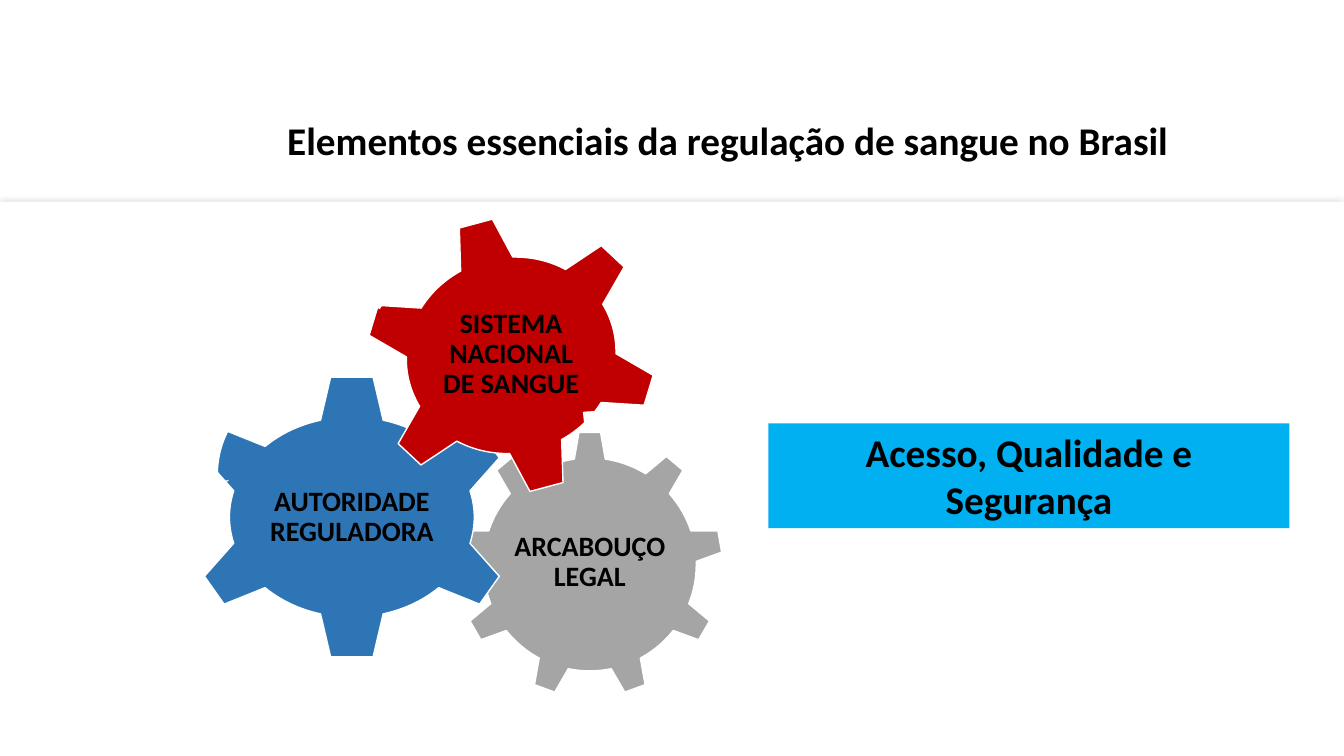
from dataclasses import dataclass

from lxml import etree
from pptx import Presentation
from pptx.dml.color import RGBColor
from pptx.enum.shapes import MSO_SHAPE as Geo
from pptx.enum.text import MSO_ANCHOR as Anchor, MSO_AUTO_SIZE as AutoSize, PP_ALIGN as Align
from pptx.oxml.ns import qn
from pptx.shapes.autoshape import Shape
from pptx.slide import Slide
from pptx.util import Inches, Pt

Box = tuple[float, float, float, float]


@dataclass(frozen=True)
class Theme:
    """Colours, font and type sizes."""
    font: str = "Calibri"
    heading: int = 28
    label: int = 20
    text: str = "000000"
    white: str = "FFFFFF"
    shadow: str = "A6A6A6"
    law: str = "A5A5A5"
    authority: str = "2E75B6"
    blood: str = "C00000"
    outcome: str = "00B0F0"


@dataclass(frozen=True)
class Gear:
    """A labelled gear."""
    geo: Geo
    box: Box
    color: str
    label: str
    label_box: Box
    rotation: float = 0


@dataclass(frozen=True)
class Arrow:
    """A circular arrow around a gear."""
    geo: Geo
    box: Box
    adjustments: tuple[float, ...]
    rotation: float = 0


THEME = Theme()

GEARS = [
    Gear(Geo.GEAR_9, (4.53, 4.28, 2.64, 2.64), THEME.law,
         "ARCABOUÇO LEGAL", (5.06, 4.9, 1.58, 1.36)),
    Gear(Geo.GEAR_6, (1.85, 3.71, 3.28, 2.84), THEME.authority,
         "AUTORIDADE REGULADORA", (2.63, 4.43, 1.72, 1.4)),
    Gear(Geo.GEAR_6, (3.61, 2.14, 2.92, 2.77), THEME.blood,
         "SISTEMA NACIONAL DE SANGUE", (4.26, 2.73, 1.62, 1.57), 345),
]

ARROWS = [
    Arrow(Geo.CIRCULAR_ARROW, (4.25, 3.96, 3.38, 3.38), (0.05, 2.99, 25.21, 158.52, 0.06)),
    Arrow(Geo.LEFT_CIRCULAR_ARROW, (1.88, 3.48, 2.46, 2.46), (0.07, 4.3, 104.89, 148.38, 0.08)),
    Arrow(Geo.CIRCULAR_ARROW, (3.44, 2.12, 2.16, 2.75), (0.06, 3.94, 133.14, 105.08, 0.07), 34.4),
]


def add_shape(s: Slide, geo: Geo, box: Box, color: str, rotation: float = 0) -> Shape:
    """Add a filled preset shape without line or shadow."""
    sp = s.shapes.add_shape(geo, *map(Inches, box))
    sp.shadow.inherit = False
    sp.fill.solid()
    sp.fill.fore_color.rgb = RGBColor.from_string(color)
    sp.line.fill.background()
    sp.rotation = rotation
    return sp


def set_text(sp: Shape, text: str, size: int) -> None:
    """Write one centred bold paragraph."""
    tf = sp.text_frame
    tf.text = text
    tf.word_wrap = True
    p = tf.paragraphs[0]
    p.alignment = Align.CENTER
    font = p.runs[0].font
    font.name, font.size, font.bold = THEME.font, Pt(size), True
    font.color.rgb = RGBColor.from_string(THEME.text)


def add_panel(s: Slide) -> None:
    """Add the white content panel with its soft shadow."""
    sp = add_shape(s, Geo.RECTANGLE, (0, 2, 13.34, 5.5), THEME.white)
    effects = sp._element.spPr.find(qn("a:effectLst"))
    shadow = etree.SubElement(effects, qn("a:outerShdw"), blurRad=str(Pt(5)),
                              dist="0", dir="0", algn="ctr", rotWithShape="0")
    color = etree.SubElement(shadow, qn("a:srgbClr"), val=THEME.shadow)
    etree.SubElement(color, qn("a:alpha"), val="42000")


def add_gear(s: Slide, gear: Gear) -> None:
    """Add a gear and its upright label."""
    sp = add_shape(s, gear.geo, gear.box, gear.color, gear.rotation)
    sp.line.color.rgb = RGBColor.from_string(THEME.white)
    sp.line.width = Pt(1)
    label = s.shapes.add_textbox(*map(Inches, gear.label_box))
    set_text(label, gear.label, THEME.label)
    tf = label.text_frame
    tf.vertical_anchor = Anchor.MIDDLE
    tf.margin_left = tf.margin_right = tf.margin_top = tf.margin_bottom = Inches(0.03)
    tf.paragraphs[0].line_spacing = 0.9


def add_arrow(s: Slide, arrow: Arrow) -> None:
    """Add a white circular arrow."""
    sp = add_shape(s, arrow.geo, arrow.box, THEME.white, arrow.rotation)
    for i, value in enumerate(arrow.adjustments):
        sp.adjustments[i] = value


def main() -> None:
    """Build and save the slide."""
    prs = Presentation()
    prs.slide_width, prs.slide_height = Inches(13.33), Inches(7.5)
    s = prs.slides.add_slide(prs.slide_layouts[6])
    add_panel(s)
    title = s.shapes.add_textbox(*map(Inches, (2.64, 1.1, 9.15, 0.57)))
    set_text(title, "Elementos essenciais da regulação de sangue no Brasil", THEME.heading)
    for gear in GEARS:
        add_gear(s, gear)
    for arrow in ARROWS:
        add_arrow(s, arrow)
    outcome = add_shape(s, Geo.RECTANGLE, (7.62, 4.2, 5.17, 1.04), THEME.outcome)
    set_text(outcome, "Acesso, Qualidade e Segurança", THEME.heading)
    for sp in (title, outcome):
        sp.text_frame.auto_size = AutoSize.SHAPE_TO_FIT_TEXT
        sp.text_frame.vertical_anchor = Anchor.TOP
    prs.save("out.pptx")


if __name__ == "__main__":
    main()
